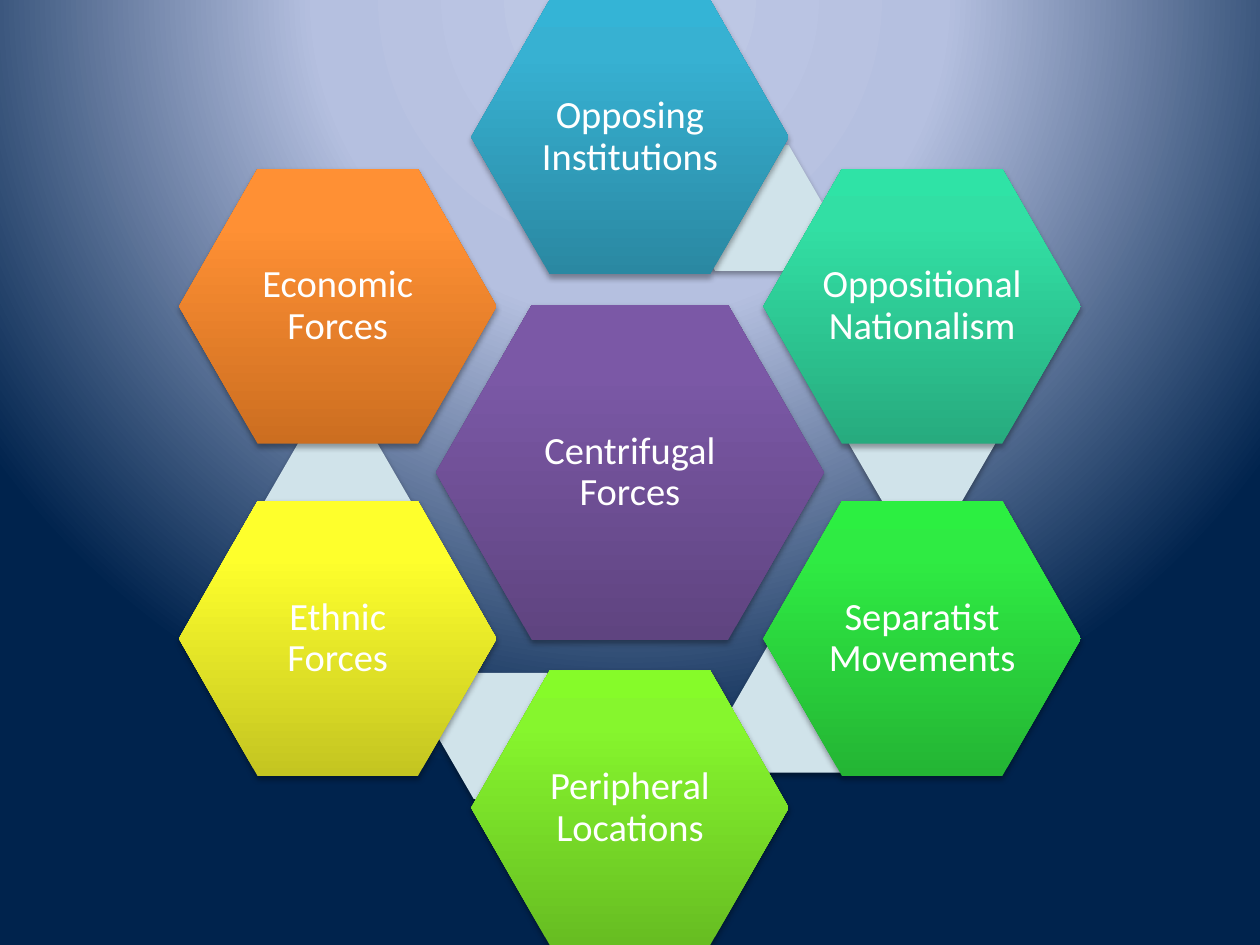
from lxml.etree import SubElement
from pptx import Presentation
from pptx.dml.color import RGBColor
from pptx.enum.shapes import MSO_SHAPE
from pptx.enum.text import MSO_ANCHOR, PP_ALIGN
from pptx.oxml import parse_xml
from pptx.oxml.ns import nsdecls, qn
from pptx.util import Cm, Pt

CENTER_X, CENTER_Y = 12.7, 9.525
LINEAR_UP = '<a:lin ang="16200000" scaled="0"/>'
CIRCULAR = ('<a:path path="circle"><a:fillToRect l="50000" t="-80000" '
            'r="50000" b="180000"/></a:path>')


def set_gradient(element, stops, direction):
    """Replace the gradient inside element with (percent, hex) stops."""
    stop_xml = "".join(
        f'<a:gs pos="{percent * 1000}"><a:srgbClr val="{color}"/></a:gs>'
        for percent, color in stops)
    old = element.find(".//" + qn("a:gradFill"))
    old.getparent().replace(old, parse_xml(
        f'<a:gradFill rotWithShape="1" {nsdecls("a")}>'
        f'<a:gsLst>{stop_xml}</a:gsLst>{direction}</a:gradFill>'))


def add_hexagon(offset, size, slant):
    """Add a shadowed hexagon centred at offset from the slide's centre."""
    (dx, dy), (width, height) = offset, size
    hexagon = slide.shapes.add_shape(
        MSO_SHAPE.HEXAGON, Cm(CENTER_X + dx - width / 2),
        Cm(CENTER_Y + dy - height / 2), Cm(width), Cm(height))
    hexagon.adjustments[0] = slant
    hexagon.line.fill.background()
    hexagon.shadow.inherit = False
    effects = hexagon._element.spPr.find(qn("a:effectLst"))
    shadow = SubElement(effects, qn("a:outerShdw"), blurRad="40000",
                        dist="23000", dir="5400000", rotWithShape="0")
    black = SubElement(shadow, qn("a:srgbClr"), val="000000")
    SubElement(black, qn("a:alpha"), val="35000")
    return hexagon


prs = Presentation()
prs.slide_width, prs.slide_height = Cm(25.4), Cm(19.05)
slide = prs.slides.add_slide(prs.slide_layouts[6])
slide.background.fill.gradient()
set_gradient(slide._element,
             [(0, "BFC9E5"), (40, "B5C0E0"), (100, "00234D")], CIRCULAR)

SIDE, STEP, POLE = 5.89, 3.35, 6.76
MAIN_SIZE, FORCE_SIZE, LINK_SIZE = (7.82, 6.76), (6.4, 5.54), (2.95, 2.54)

# label, centre offset, size, gradient from bottom to top, offset of the link behind
forces = [
    ("Centrifugal Forces", (0, 0), MAIN_SIZE,
     ("5F4480", "7B58A6", "7C57A8"), None),
    ("Opposing Institutions", (0, -POLE), FORCE_SIZE,
     ("2A88A2", "37B1D2", "34B4D6"), (2.46, -5.33)),
    ("Oppositional Nationalism", (SIDE, -STEP), FORCE_SIZE,
     ("27AB7E", "32DFA4", "2FE3A6"), (SIDE, -0.58)),
    ("Separatist Movements", (SIDE, STEP), FORCE_SIZE,
     ("24B534", "2FEB43", "2CEF41"), (3.51, 4.78)),
    ("Peripheral Locations", (0, POLE), FORCE_SIZE,
     ("67BD22", "86F62D", "86FB29"), (-2.41, 5.31)),
    ("Ethnic Forces", (-SIDE, STEP), FORCE_SIZE,
     ("C4C521", "FEFF2C", "FEFF2D"), (-SIDE, 0.58)),
    ("Economic Forces", (-SIDE, -STEP), FORCE_SIZE,
     ("CC6E20", "FF9034", "FF9136"), None),
]
margin = Cm(0.13)
frame_format = {"word_wrap": True, "vertical_anchor": MSO_ANCHOR.MIDDLE,
                "margin_left": margin, "margin_right": margin,
                "margin_top": margin, "margin_bottom": margin}
paragraph_format = {"alignment": PP_ALIGN.CENTER, "line_spacing": 0.9}
font_format = {"name": "Calibri", "size": Pt(22)}

for label, offset, size, colors, link_offset in forces:
    if link_offset:
        link = add_hexagon(link_offset, LINK_SIZE, 0.289)
        link.fill.solid()
        link.fill.fore_color.rgb = RGBColor.from_string("D0E3EA")

    force = add_hexagon(offset, size, 0.286)
    force.fill.gradient()
    set_gradient(force._element, zip((0, 80, 100), colors), LINEAR_UP)
    frame = force.text_frame
    frame.text = label
    paragraph = frame.paragraphs[0]
    font = paragraph.runs[0].font
    for target, values in ((frame, frame_format),
                           (paragraph, paragraph_format),
                           (font, font_format)):
        for attribute, value in values.items():
            setattr(target, attribute, value)
    font.color.rgb = RGBColor.from_string("FFFFFF")

prs.save("out.pptx")
